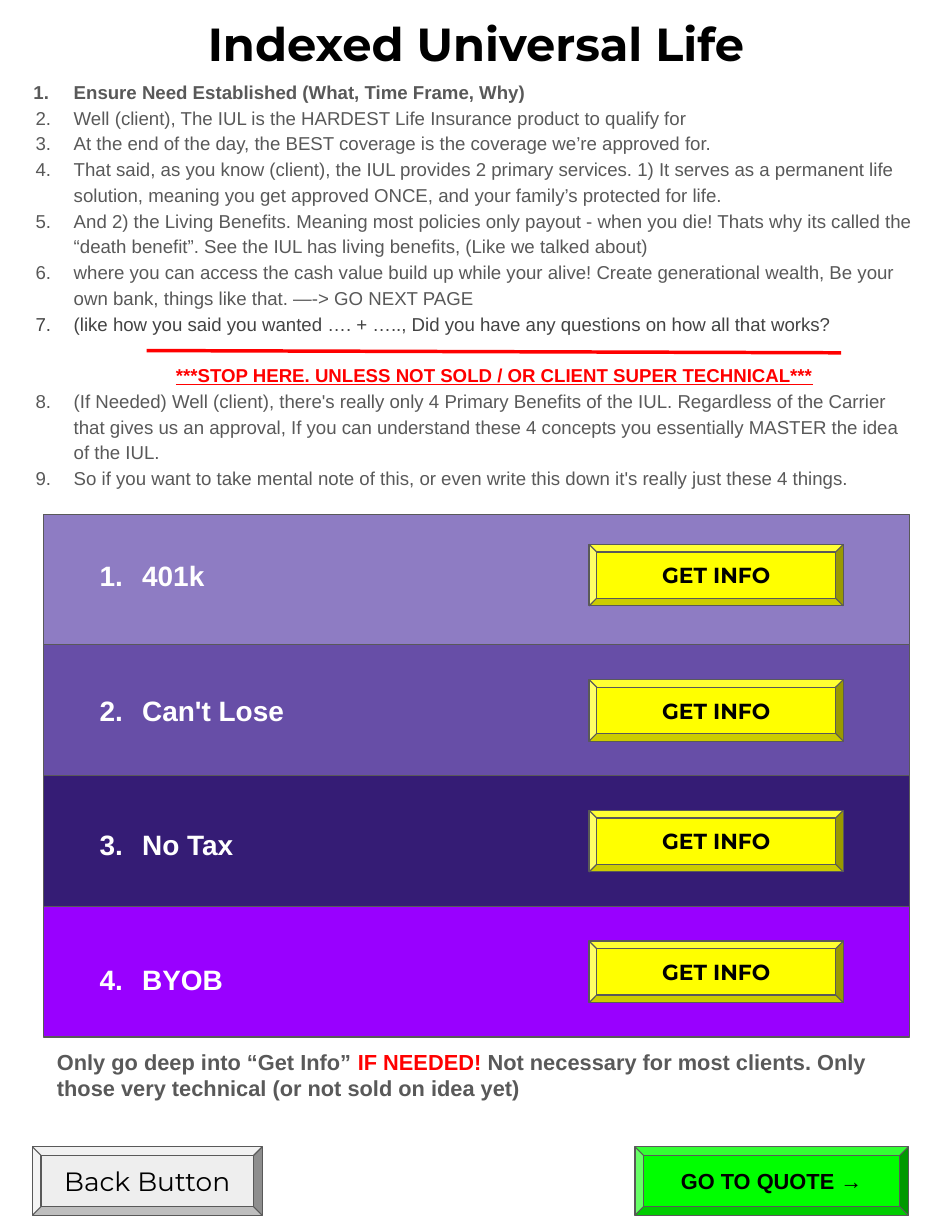
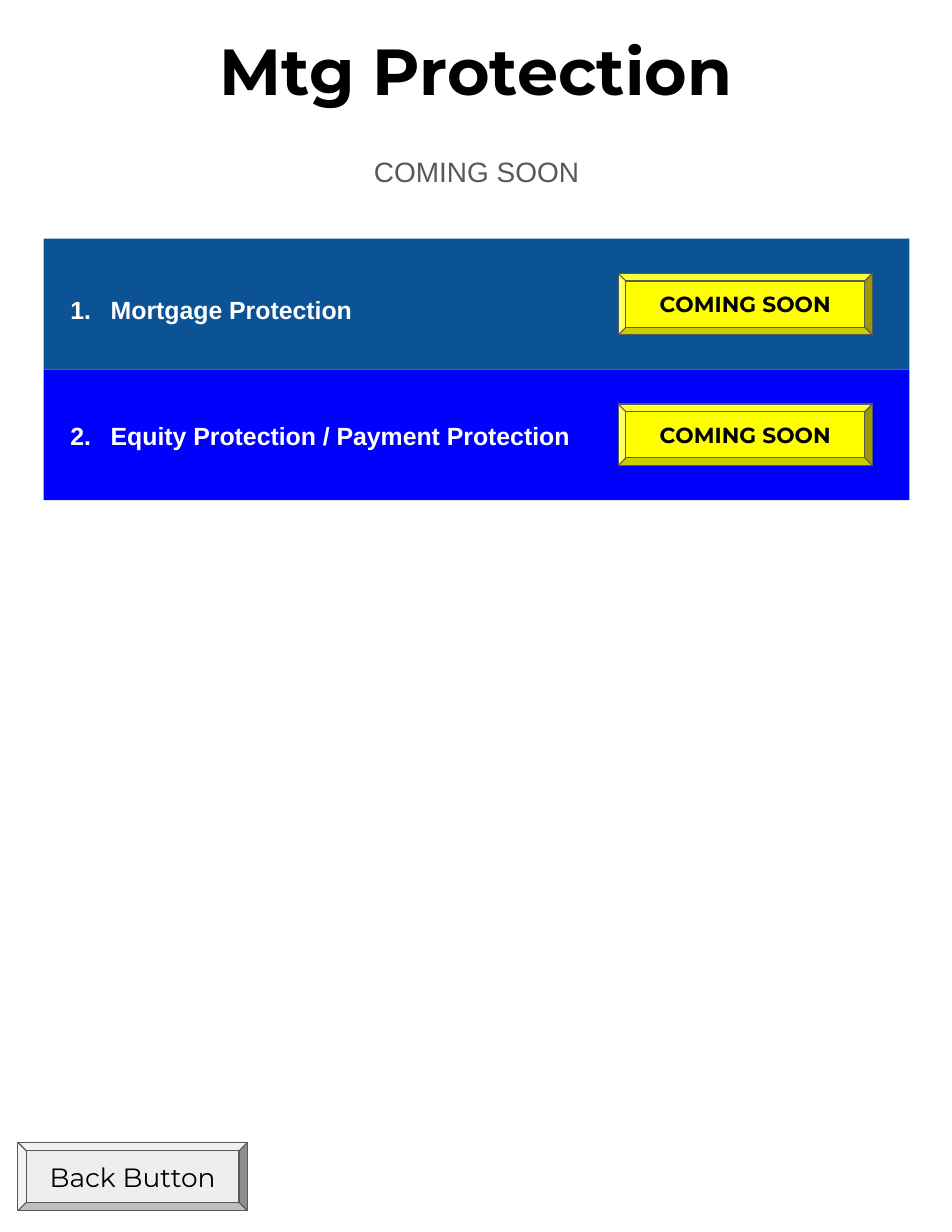
from lxml import etree
from pptx import Presentation
from pptx.dml.color import RGBColor
from pptx.enum.shapes import MSO_CONNECTOR, MSO_SHAPE
from pptx.enum.text import MSO_ANCHOR, PP_ALIGN
from pptx.oxml.ns import qn
from pptx.util import Inches, Pt

BEVEL = MSO_SHAPE.BEVEL
RECTANGLE = MSO_SHAPE.RECTANGLE
STRAIGHT = MSO_CONNECTOR.STRAIGHT
TOP, MIDDLE, BOTTOM = MSO_ANCHOR.TOP, MSO_ANCHOR.MIDDLE, MSO_ANCHOR.BOTTOM
LEFT, CENTER = PP_ALIGN.LEFT, PP_ALIGN.CENTER

BLACK = RGBColor(0x00, 0x00, 0x00)
WHITE = RGBColor(0xFF, 0xFF, 0xFF)
GRAY = RGBColor(0x59, 0x59, 0x59)
DARK_GRAY = RGBColor(0x43, 0x43, 0x43)
LIGHT_GRAY = RGBColor(0xEE, 0xEE, 0xEE)
RED = RGBColor(0xFF, 0x00, 0x00)
YELLOW = RGBColor(0xFF, 0xFF, 0x00)
GREEN = RGBColor(0x00, 0xFF, 0x00)
LAVENDER = RGBColor(0x8E, 0x7C, 0xC3)
PURPLE = RGBColor(0x67, 0x4E, 0xA7)
INDIGO = RGBColor(0x35, 0x1C, 0x75)
VIOLET = RGBColor(0x99, 0x00, 0xFF)
STEEL_BLUE = RGBColor(0x0B, 0x53, 0x94)
BLUE = RGBColor(0x00, 0x00, 0xFF)

BODY_FONT = "Arial"
DISPLAY_FONT = "Montserrat"

SLIDE_WIDTH, SLIDE_HEIGHT = Inches(8.5), Inches(11)
COLUMN = SLIDE_WIDTH / 34
ROW = SLIDE_HEIGHT / 44

BAND_LEFT, BAND_WIDTH, BAND_HEIGHT = 1.56, 30.92, 4.67
BUTTON_WIDTH, BUTTON_HEIGHT, BUTTON_DROP = 9.08, 2.2, 1.24
NAVIGATION_HEIGHT = 2.44
LABEL_GAP = 43.2
SCRIPT_GAP = 16.6

OPENING_LINES = [
    "Well (client), The IUL is the HARDEST Life Insurance product to qualify for",
    "At the end of the day, the BEST coverage is the coverage we’re approved for.",
    "That said, as you know (client), the IUL provides 2 primary services. "
    "1) It serves as a permanent life solution, meaning you get approved ONCE, "
    "and your family’s protected for life.",
    "And 2) the Living Benefits. Meaning most policies only payout - when you die! "
    "Thats why its called the “death benefit”. See the IUL has living benefits, "
    "(Like we talked about)",
    "where you can access the cash value build up while your alive! Create "
    "generational wealth, Be your own bank, things like that. —-> GO NEXT PAGE",
]
TECHNICAL_LINES = [
    "(If Needed) Well (client), there's really only 4 Primary Benefits of the IUL. "
    "Regardless of the Carrier that gives us an approval, If you can understand "
    "these 4 concepts you essentially MASTER the idea of the IUL.",
    "So if you want to take mental note of this, or even write this down it's "
    "really just these 4 things.",
]


def place(left, top, width, height):
    return [round(left * COLUMN), round(top * ROW),
            round(width * COLUMN), round(height * ROW)]


def style(run, size, color, bold=False, font=BODY_FONT, underline=None):
    run.font.size = Pt(size)
    run.font.color.rgb = color
    run.font.bold = bold
    run.font.name = font
    run.font.underline = underline


def prepare_frame(shape, anchor):
    frame = shape.text_frame
    frame.word_wrap = True
    frame.vertical_anchor = anchor
    frame.margin_left = frame.margin_right = Inches(0.1)
    frame.margin_top = frame.margin_bottom = Inches(0.1)
    return frame


def add_text_frame(slide, box, anchor=TOP):
    return prepare_frame(slide.shapes.add_textbox(*place(*box)), anchor)


def write(paragraph, text, size, color, align=LEFT, **options):
    paragraph.text = text
    paragraph.alignment = align
    style(paragraph.runs[0], size, color, **options)


def indent(paragraph, hanging=0.0):
    properties = paragraph._p.get_or_add_pPr()
    properties.set("marL", str(Inches(0.5)))
    properties.set("indent", str(-Inches(hanging)))
    return properties


def number(paragraph, color, hanging, start=1):
    properties = indent(paragraph, hanging)
    bullet_color = etree.SubElement(properties, qn("a:buClr"))
    etree.SubElement(bullet_color, qn("a:srgbClr"), val=str(color))
    etree.SubElement(properties, qn("a:buFont"), typeface=BODY_FONT)
    etree.SubElement(properties, qn("a:buAutoNum"), type="arabicPeriod", startAt=str(start))


def next_paragraph(frame, line_spacing, gap=0):
    first = not frame.paragraphs[0].runs
    paragraph = frame.paragraphs[0] if first else frame.add_paragraph()
    paragraph.line_spacing = line_spacing
    paragraph.space_before = Pt(0 if first else gap)
    return paragraph


def add_title(slide, text, size, top, height, anchor):
    frame = add_text_frame(slide, (1.16, top, 31.68, height), anchor)
    write(frame.paragraphs[0], text, size, BLACK, CENTER, bold=True, font=DISPLAY_FONT)


def add_block(slide, preset, box, fill, outlined=True):
    shape = slide.shapes.add_shape(preset, *place(*box))
    shape.shadow.inherit = False
    shape.fill.solid()
    shape.fill.fore_color.rgb = fill
    if outlined:
        shape.line.color.rgb = GRAY
        shape.line.width = Pt(0.75)
    else:
        shape.line.fill.background()
    return shape


def add_button(slide, box, text, fill, size=14, bold=True, font=DISPLAY_FONT):
    frame = prepare_frame(add_block(slide, BEVEL, box, fill), MIDDLE)
    write(frame.paragraphs[0], text, size, BLACK, CENTER, bold=bold, font=font)


def add_back_button(slide, left, top):
    add_button(slide, (left, top, 8.2, NAVIGATION_HEIGHT), "Back Button",
               LIGHT_GRAY, size=17, bold=False)


def add_bands(slide, top, fills, button_left, button_text, outlined, first_drop=BUTTON_DROP):
    for index, fill in enumerate(fills):
        band_top = top + index * BAND_HEIGHT
        add_block(slide, RECTANGLE, (BAND_LEFT, band_top, BAND_WIDTH, BAND_HEIGHT),
                  fill, outlined)
        drop = BUTTON_DROP if index else first_drop
        add_button(slide, (button_left, band_top + drop, BUTTON_WIDTH, BUTTON_HEIGHT),
                   button_text, YELLOW)


def add_band_labels(slide, box, labels, size, hanging):
    frame = add_text_frame(slide, box)
    for label in labels:
        paragraph = next_paragraph(frame, 2.0, LABEL_GAP)
        write(paragraph, label, size, WHITE, bold=True)
        number(paragraph, WHITE, hanging)


def add_call_script(slide):
    frame = add_text_frame(slide, (0.24, 2.36, 32.84, 15.68))

    def add_step(text, color=GRAY, bold=False, hanging=0.34, start=1):
        paragraph = next_paragraph(frame, 1.15)
        write(paragraph, text, 12, color, bold=bold)
        number(paragraph, color, hanging, start)

    add_step("Ensure Need Established (What, Time Frame, Why)", bold=True, hanging=0.36)
    for line in OPENING_LINES:
        add_step(line)
    add_step("(like how you said you wanted …. + ….., Did you have any questions "
             "on how all that works?", DARK_GRAY)
    stop = next_paragraph(frame, 1.15, SCRIPT_GAP)
    write(stop, "***STOP HERE. UNLESS NOT SOLD / OR CLIENT SUPER TECHNICAL***",
          12, RED, CENTER, bold=True, underline=True)
    indent(stop)
    for line in TECHNICAL_LINES:
        add_step(line, start=len(OPENING_LINES) + 3)


def add_stop_line(slide):
    left, top, right, bottom = place(5.24, 12.52, 30.04, 12.6)
    line = slide.shapes.add_connector(STRAIGHT, left, top, right, bottom)
    line.line.color.rgb = RED
    line.line.width = Pt(2.25)
    etree.SubElement(line._element.spPr, qn("a:effectLst"))


def add_usage_note(slide):
    paragraph = add_text_frame(slide, (1.64, 37.04, BAND_WIDTH, 2.44)).paragraphs[0]
    for text, color in (
        ("Only go deep into “Get Info” ", GRAY),
        ("IF NEEDED!", RED),
        (" Not necessary for most clients. Only those very technical "
         "(or not sold on idea yet)", GRAY),
    ):
        run = paragraph.add_run()
        run.text = text
        style(run, 14, color, bold=True)


def build_universal_life(slide):
    add_bands(slide, 18.36, [LAVENDER, PURPLE, INDIGO, VIOLET], 21.04, "GET INFO",
              outlined=True, first_drop=1.08)
    add_call_script(slide)
    add_title(slide, "Indexed Universal Life", 29.8, 0.32, 2.44, MIDDLE)
    add_band_labels(slide, (2.68, 18.36, 28.6, 16.56),
                    ["401k", "Can't Lose", "No Tax", "BYOB"], 18, 0.38)
    add_usage_note(slide)
    add_back_button(slide, 1.16, 40.96)
    add_button(slide, (22.68, 40.96, 9.76, NAVIGATION_HEIGHT), "GO TO QUOTE →",
               GREEN, font=BODY_FONT)
    add_stop_line(slide)


def build_mortgage_protection(slide):
    add_title(slide, "Mtg Protection", 41.8, 0.52, 3.76, BOTTOM)
    add_back_button(slide, 0.64, 40.8)
    add_bands(slide, 8.52, [STEEL_BLUE, BLUE], 22.08, "COMING SOON", outlined=False)
    add_band_labels(slide, (BAND_LEFT, 9.04, 28.6, 6.48),
                    ["Mortgage Protection", "Equity Protection / Payment Protection"],
                    16, 0.36)
    subtitle = add_text_frame(slide, (5.12, 5.12, 23.8, 2))
    write(subtitle.paragraphs[0], "COMING SOON", 18, GRAY, CENTER)


def main():
    presentation = Presentation()
    presentation.slide_width, presentation.slide_height = SLIDE_WIDTH, SLIDE_HEIGHT
    blank = presentation.slide_layouts[6]
    for build in (build_universal_life, build_mortgage_protection):
        build(presentation.slides.add_slide(blank))
    presentation.save("out.pptx")


if __name__ == "__main__":
    main()
